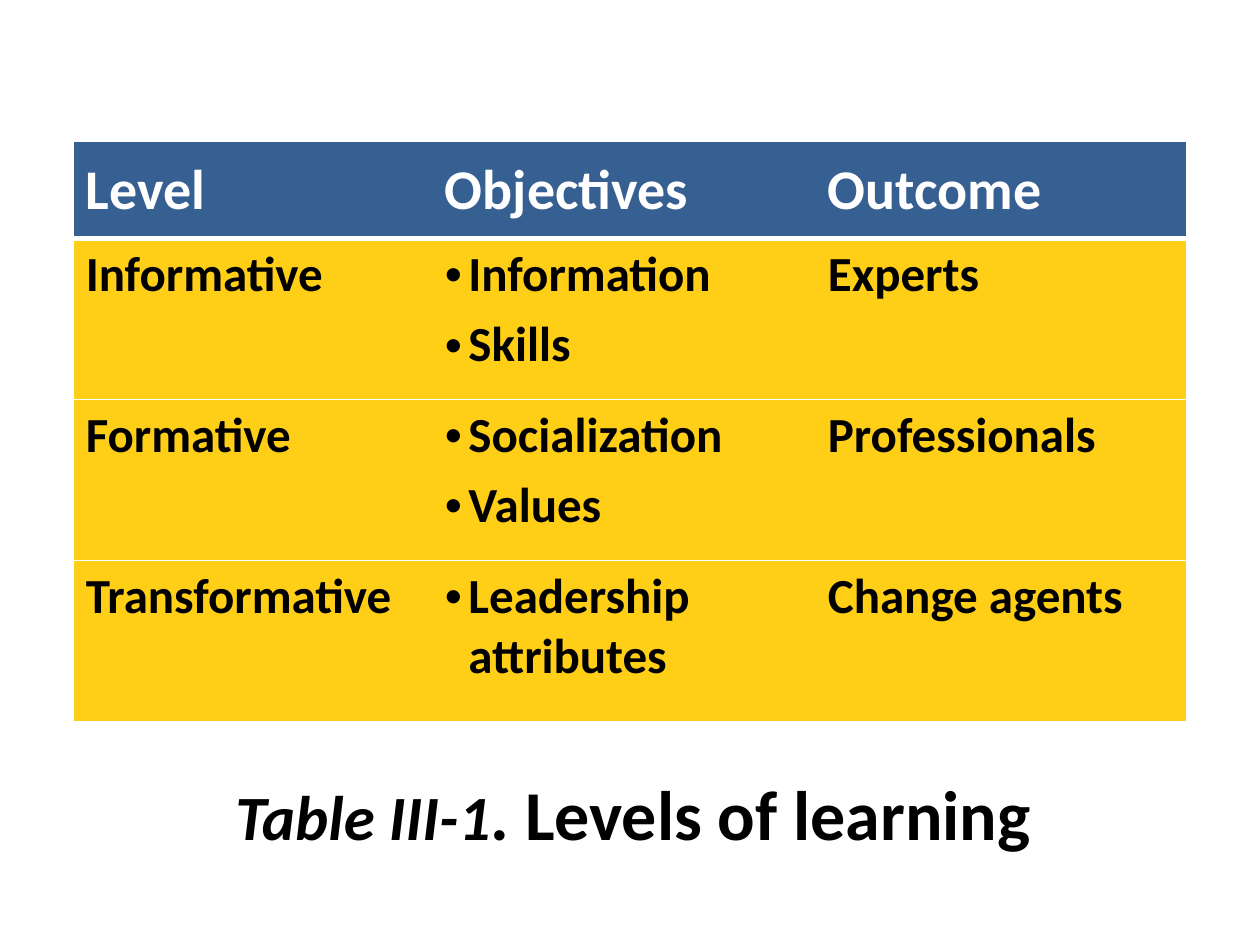
from typing import NamedTuple

from lxml.etree import SubElement
from pptx import Presentation
from pptx.dml.color import RGBColor
from pptx.enum.text import MSO_ANCHOR, PP_ALIGN
from pptx.oxml.ns import qn
from pptx.util import Pt

WHITE, BLACK, BLUE, YELLOW = "FFFFFF", "000000", "376092", "FFCE17"
HEADER_FORMAT = {"size": Pt(32), "bold": True, "name": "Calibri"}
BODY_FORMAT = {"size": Pt(28), "bold": True, "name": "Calibri"}
NUMBER_FORMAT = {"size": Pt(36), "bold": True, "italic": True, "name": "Calibri"}
CAPTION_FORMAT = {"size": Pt(40), "bold": True, "italic": False, "name": "Calibri"}
COLUMN_WIDTHS = (205.2, 218.9, 212.4)
HEADER_HEIGHT, LEVEL_HEIGHT = 55.4, 92
BULLET_INDENT = Pt(13.5)


class Level(NamedTuple):
    name: str
    objectives: tuple[str, ...]
    outcome: str


HEADINGS = ("Level", "Objectives", "Outcome")
LEVELS = (
    Level("Informative", ("Information", "Skills"), "Experts"),
    Level("Formative", ("Socialization", "Values"), "Professionals"),
    Level("Transformative", ("Leadership attributes",), "Change agents"),
)


def rgb(hex_color: str) -> RGBColor:
    return RGBColor.from_string(hex_color)


def add_text(paragraph, text: str, text_format: dict, color: str) -> None:
    run = paragraph.add_run()
    run.text = text
    for attribute, value in text_format.items():
        setattr(run.font, attribute, value)
    run.font.color.rgb = rgb(color)


def add_bullet(paragraph) -> None:
    properties = paragraph._p.get_or_add_pPr()
    properties.set("marL", str(BULLET_INDENT))
    properties.set("indent", str(-BULLET_INDENT))
    SubElement(properties, qn("a:buFont"), typeface="Arial")
    SubElement(properties, qn("a:buChar"), char="•")


def set_borders(cell, widths: dict[str, float]) -> None:
    """Draw white borders by side; a width of 0 hides that side."""
    properties = cell._tc.get_or_add_tcPr()
    for side in "LRTB":
        width = widths[side]
        line = SubElement(properties, qn(f"a:ln{side}"), w=str(Pt(width)))
        if width:
            fill = SubElement(line, qn("a:solidFill"))
            SubElement(fill, qn("a:srgbClr"), val=WHITE)
        else:
            SubElement(line, qn("a:noFill"))


def fill_cell(cell, texts: tuple[str, ...], row: int, column: int) -> None:
    is_header = row == 0
    set_borders(cell, {
        "L": 1 if column == 0 else 0,
        "R": 1 if column == len(HEADINGS) - 1 else 0,
        "T": 3 if row == 1 else 1,
        "B": 3 if is_header else 1,
    })
    cell.fill.solid()
    cell.fill.fore_color.rgb = rgb(BLUE if is_header else YELLOW)
    cell.vertical_anchor = MSO_ANCHOR.MIDDLE if is_header else MSO_ANCHOR.TOP
    frame = cell.text_frame
    for index, text in enumerate(texts):
        paragraph = frame.add_paragraph() if index else frame.paragraphs[0]
        if is_header:
            add_text(paragraph, text, HEADER_FORMAT, WHITE)
            continue
        paragraph.space_before = Pt(6)
        if column == 1:
            add_bullet(paragraph)
        add_text(paragraph, text, BODY_FORMAT, BLACK)


def add_levels_table(slide) -> None:
    rows = [[(heading,) for heading in HEADINGS]]
    rows += [[(level.name,), level.objectives, (level.outcome,)] for level in LEVELS]
    heights = [HEADER_HEIGHT] + [LEVEL_HEIGHT] * len(LEVELS)
    table = slide.shapes.add_table(
        len(rows), len(HEADINGS), Pt(41.8), Pt(80.9),
        Pt(sum(COLUMN_WIDTHS)), Pt(sum(heights)),
    ).table
    table.horz_banding = False
    for column, width in zip(table.columns, COLUMN_WIDTHS):
        column.width = Pt(width)
    for row, (texts_by_column, height) in enumerate(zip(rows, heights)):
        table.rows[row].height = Pt(height)
        for column, texts in enumerate(texts_by_column):
            fill_cell(table.cell(row, column), texts, row, column)


def add_caption(slide) -> None:
    frame = slide.shapes.add_textbox(Pt(75.6), Pt(429.8), Pt(572.4), Pt(69.1)).text_frame
    frame.word_wrap = True
    frame.vertical_anchor = MSO_ANCHOR.MIDDLE
    caption = frame.paragraphs[0]
    caption.alignment = PP_ALIGN.CENTER
    add_text(caption, "Table III-1", NUMBER_FORMAT, BLACK)
    add_text(caption, ". Levels of learning", CAPTION_FORMAT, BLACK)


def main() -> None:
    presentation = Presentation()
    presentation.slide_width, presentation.slide_height = Pt(720), Pt(540)
    slide = presentation.slides.add_slide(presentation.slide_layouts[6])
    add_levels_table(slide)
    add_caption(slide)
    presentation.save("out.pptx")


if __name__ == "__main__":
    main()
